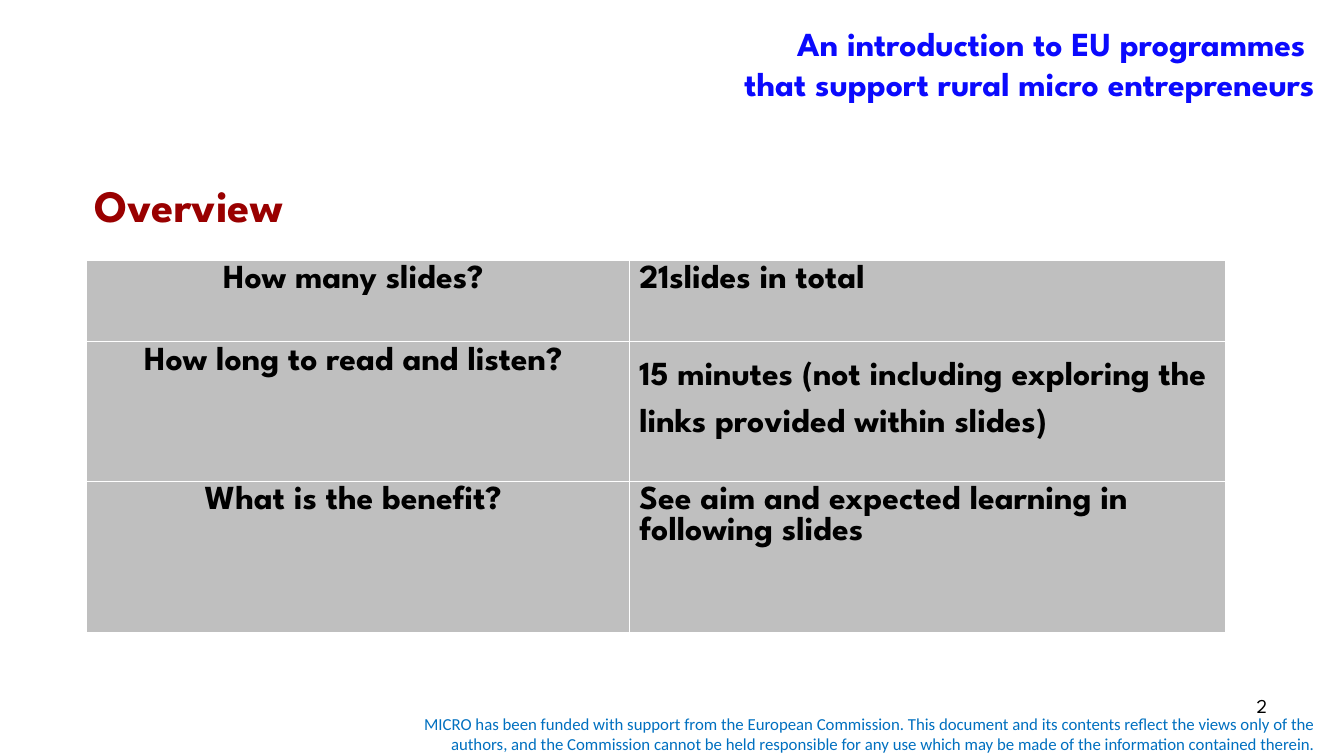
"""Build the overview slide of a course on EU programmes for rural micro entrepreneurs."""
import dataclasses

import pptx
import pptx.dml.color
import pptx.enum.text
import pptx.oxml
import pptx.oxml.ns
import pptx.util

Pt = pptx.util.Pt
Align = pptx.enum.text.PP_ALIGN
Anchor = pptx.enum.text.MSO_ANCHOR


@dataclasses.dataclass(frozen=True)
class Theme:
    blue: str = "0B0AFD"
    red: str = "990000"
    footer_blue: str = "0070C0"
    black: str = "000000"
    white: str = "FFFFFF"
    grey: str = "BFBFBF"
    heading_font: str = "League Spartan"
    footer_font: str = "Calibri"
    heading_size: float = 32
    body_size: float = 24
    number_size: float = 14
    footer_size: float = 12


class SlideBuilder:
    def __init__(self, page, theme):
        self.page = page
        self.theme = theme

    def style(self, para, size, color, bold=False, font=None, align=Align.LEFT, spacing=None):
        para.alignment = align
        para.line_spacing = spacing
        para.font.name = font or self.theme.heading_font
        para.font.size = Pt(size)
        para.font.bold = bold
        para.font.color.rgb = pptx.dml.color.RGBColor.from_string(color)

    def text(self, words, left, top, width, height, anchor=Anchor.TOP, **style):
        box = self.page.shapes.add_textbox(Pt(left), Pt(top), Pt(width), Pt(height))
        frame = box.text_frame
        frame.word_wrap = True
        frame.vertical_anchor = anchor
        para = frame.paragraphs[0]
        para.text = words
        self.style(para, **style)

    def border(self, cell, edge):
        line = pptx.oxml.parse_xml(
            f'<a:{edge} {pptx.oxml.ns.nsdecls("a")} w="{Pt(1)}"><a:solidFill>'
            f'<a:srgbClr val="{self.theme.white}"/></a:solidFill></a:{edge}>')
        cell._tc.get_or_add_tcPr().append(line)

    def table(self, rows, left, top, widths, heights):
        frame = self.page.shapes.add_table(
            len(rows), len(widths), Pt(left), Pt(top), Pt(sum(widths)), Pt(sum(heights)))
        grid = frame.table
        for column, width in zip(grid.columns, widths):
            column.width = Pt(width)
        for row_index, (row, height) in enumerate(zip(rows, heights)):
            grid.rows[row_index].height = Pt(height)
            question, answer, spacing = row
            columns = ((question, Align.CENTER, None), (answer, Align.LEFT, spacing))
            for column_index, (words, align, line_spacing) in enumerate(columns):
                cell = grid.cell(row_index, column_index)
                for edge in ("lnL", "lnR", "lnT", "lnB"):
                    self.border(cell, edge)
                cell.fill.solid()
                cell.fill.fore_color.rgb = pptx.dml.color.RGBColor.from_string(self.theme.grey)
                para = cell.text_frame.paragraphs[0]
                para.text = words
                self.style(para, self.theme.body_size, self.theme.black, bold=True,
                           align=align, spacing=line_spacing)


def main():
    theme = Theme()
    deck = pptx.Presentation()
    deck.slide_width, deck.slide_height = Pt(960), Pt(540)
    builder = SlideBuilder(deck.slides.add_slide(deck.slide_layouts[6]), theme)

    builder.text(
        "MICRO has been funded with support from the European Commission. This document and "
        "its contents reflect the views only of the authors, and the Commission cannot be held "
        "responsible for any use which may be made of the information contained therein.",
        270, 506.2, 676.8, 36, anchor=Anchor.MIDDLE, size=theme.footer_size,
        color=theme.footer_blue, font=theme.footer_font, align=Align.RIGHT)
    builder.text(
        "An introduction to EU programmes \vthat support rural micro entrepreneurs",
        82, 0, 864, 90, anchor=Anchor.MIDDLE, size=theme.body_size, color=theme.blue,
        bold=True, align=Align.RIGHT)
    builder.table(
        [("How many slides? ", "21slides in total", None),
         ("How long to read and listen? ",
          "15 minutes (not including exploring the links provided within slides)", 1.5),
         ("What is the benefit? ", "See aim and expected learning in following slides", None)],
        61.5, 185.8, widths=(388, 425.6), heights=(58.3, 99.6, 108))
    builder.text("2", 688.3, 491.8, 224, 37.4, size=theme.number_size, color=theme.black,
                 align=Align.RIGHT)
    builder.text("Overview", 60.2, 123.1, 208.8, 46, size=theme.heading_size,
                 color=theme.red, bold=True)
    deck.save("out.pptx")


if __name__ == "__main__":
    main()
